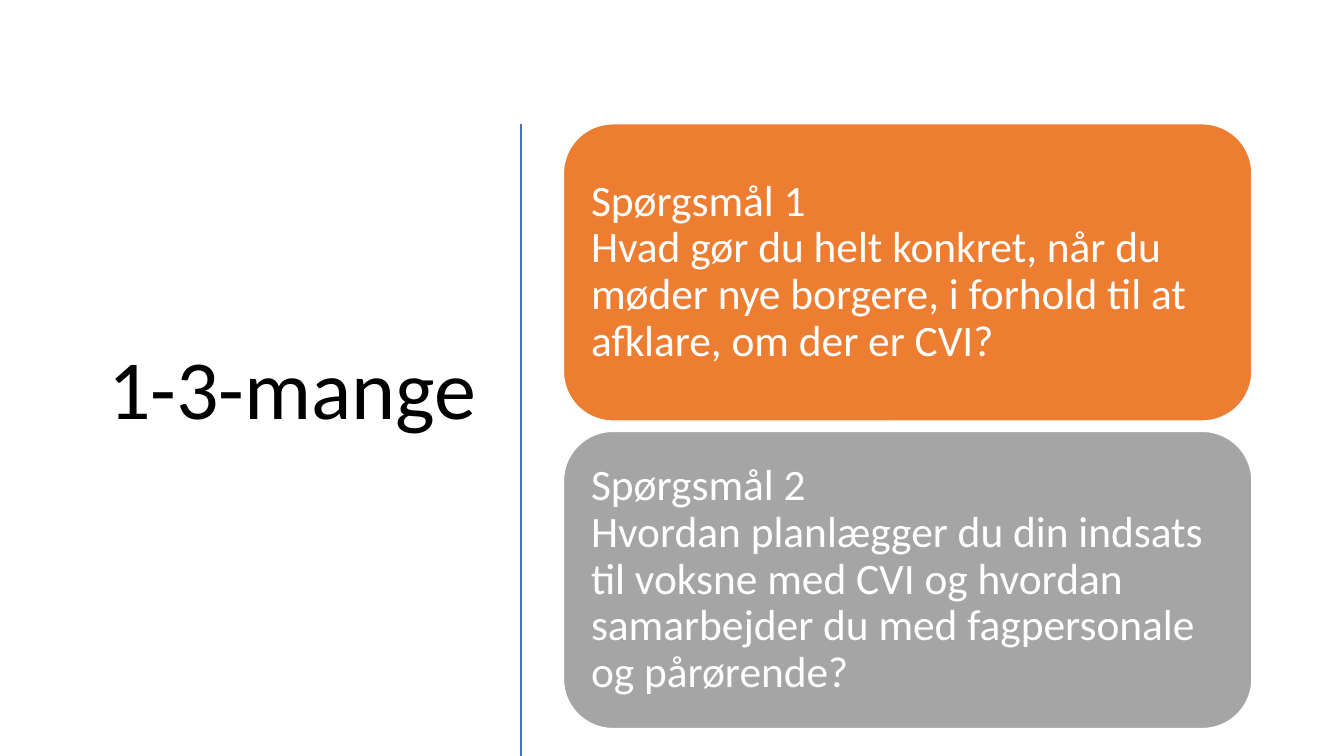
from lxml.etree import SubElement
from pptx import Presentation
from pptx.dml.color import RGBColor
from pptx.enum.shapes import MSO_CONNECTOR, MSO_SHAPE
from pptx.enum.text import MSO_ANCHOR, MSO_AUTO_SIZE, PP_ALIGN
from pptx.oxml.ns import qn
from pptx.util import Cm, Pt

BLACK = RGBColor(0x00, 0x00, 0x00)
WHITE = RGBColor(0xFF, 0xFF, 0xFF)
BLUE = RGBColor(0x44, 0x72, 0xC4)
ORANGE = RGBColor(0xED, 0x7D, 0x31)
GREY = RGBColor(0xA5, 0xA5, 0xA5)

QUESTIONS = [
    (ORANGE, "Spørgsmål 1\vHvad gør du helt konkret, når du møder nye borgere, "
             "i forhold til at afklare, om der er CVI?"),
    (GREY, "Spørgsmål 2\vHvordan planlægger du din indsats til voksne med CVI "
           "og hvordan samarbejder du med fagpersonale og pårørende?"),
]
CARD_TOP = 3.12
CARD_HEIGHT = 7.49
CARD_PITCH = 7.8 - 0.05


def set_values(item, values):
    for name, value in values.items():
        setattr(item, name, value)


def write_text(box, text, size, color, align, frame_values):
    frame = box.text_frame
    set_values(frame, {"word_wrap": True, "auto_size": MSO_AUTO_SIZE.NONE,
                       "vertical_anchor": MSO_ANCHOR.MIDDLE, **frame_values})
    para = frame.paragraphs[0]
    para.text = text
    set_values(para, {"alignment": align, "line_spacing": 0.9})
    for span in para.runs:
        set_values(span.font, {"name": "Calibri", "size": Pt(size), "bold": False})
        span.font.color.rgb = color


deck = Presentation()
set_values(deck, {"slide_width": Cm(33.87), "slide_height": Cm(19.05)})
page = deck.slides.add_slide(deck.slide_layouts[5])

title = page.shapes.title
set_values(title, {"left": Cm(1.32), "top": Cm(2.97),
                   "width": Cm(10.95), "height": Cm(15.52)})
write_text(title, "1-3-mange", 60, BLACK, PP_ALIGN.RIGHT,
           {"margin_bottom": Cm(1.83)})

divider = page.shapes.add_connector(
    MSO_CONNECTOR.STRAIGHT, Cm(13.13), Cm(3.12), Cm(13.13), Cm(19.05))
divider.line.color.rgb = BLUE
divider.line.width = Pt(2)
SubElement(divider._element.spPr, qn("a:effectLst"))

for index, (color, question) in enumerate(QUESTIONS):
    card = page.shapes.add_shape(
        MSO_SHAPE.ROUNDED_RECTANGLE, Cm(14.2), Cm(CARD_TOP + index * CARD_PITCH),
        Cm(17.35), Cm(CARD_HEIGHT))
    card.shadow.inherit = False
    card.fill.solid()
    card.fill.fore_color.rgb = color
    card.line.color.rgb = WHITE
    card.line.width = Pt(1)
    write_text(card, question, 31, WHITE, PP_ALIGN.LEFT,
               dict.fromkeys(["margin_left", "margin_top", "margin_right",
                              "margin_bottom"], Cm(0.33)))

deck.save("out.pptx")
